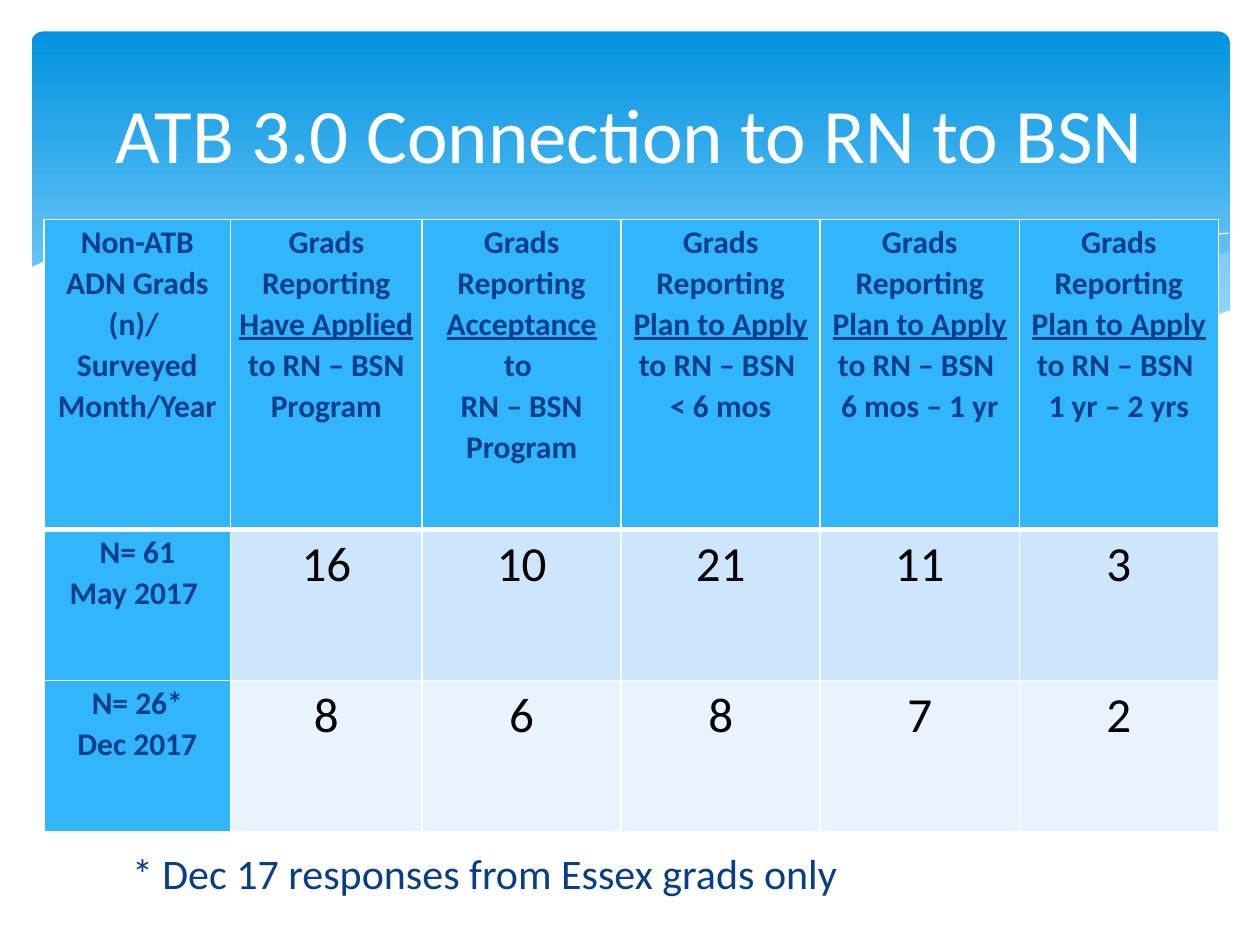
from dataclasses import dataclass
from typing import Optional

from lxml import etree
from pptx import Presentation
from pptx import util as u
from pptx.dml.color import RGBColor
from pptx.enum import shapes, text
from pptx.oxml.ns import qn


@dataclass(frozen=True)
class Theme:
    font: str = "Calibri"
    white: str = "FFFFFF"
    black: str = "000000"
    navy: str = "073E87"
    header: str = "31B6FD"
    bands: tuple = ("CEE5FE", "E8F3FF")
    banner: tuple = ("0293E0", "83D3FE")
    mist: str = "C6E7FC"
    title_size: int = 44
    value_size: int = 28
    note_size: int = 24
    label_size: int = 18


@dataclass(frozen=True)
class Wave:
    points: tuple
    fill: Optional[str] = None
    alpha: int = 100


@dataclass(frozen=True)
class Span:
    text: str
    underline: bool = False


THEME = Theme()

# Banner curves, in inches from the slide corner, back to front
WAVES = (
    Wave(((9.76, 2), (9.35, 2.07), (8.61, 2.23), (7.79, 2.42), (7.06, 2.57), (6.61, 2.65),
          (7.05, 2.71), (7.57, 2.76), (8.03, 2.78), (8.54, 2.76), (8.97, 2.7), (9.35, 2.62),
          (9.76, 2.47)), THEME.mist, 29),
    Wave(((8.93, 2.73), (8.37, 2.65), (7.75, 2.54), (7.06, 2.4), (6.29, 2.22), (5.69, 2.08),
          (5.14, 1.98), (4.65, 1.91), (4.2, 1.87), (3.61, 1.85), (3.13, 1.88), (2.86, 1.91),
          (3.42, 1.99), (4.04, 2.11), (4.91, 2.32), (5.66, 2.48), (6.34, 2.61), (6.95, 2.7),
          (7.48, 2.76), (8.07, 2.78), (8.57, 2.77)), THEME.mist, 40),
    Wave(((3.09, 1.95), (3.44, 1.9), (3.87, 1.87), (4.33, 1.87), (4.89, 1.9), (5.56, 1.97),
          (6.36, 2.08), (7.27, 2.26), (8.31, 2.51), (9.07, 2.72))),
    Wave(((6.13, 2.57), (6.72, 2.41), (7.48, 2.23), (8.06, 2.1), (8.66, 1.99), (9.1, 1.92),
          (9.51, 1.87), (9.75, 1.85))),
    Wave(((9.77, 2.46), (9.5, 2.56), (9.2, 2.65), (8.75, 2.73), (8.09, 2.77), (7.44, 2.74),
          (6.68, 2.65), (5.79, 2.5), (4.47, 2.2), (3.65, 2.02), (2.92, 1.9), (2.3, 1.85),
          (1.77, 1.84), (1.32, 1.86), (0.95, 1.91), (0.59, 1.99), (0.36, 2.07), (0.23, 2.13),
          (0.23, 3.29), (9.77, 3.29)), THEME.white),
)


def plan_heading(period: str) -> tuple:
    return ((Span("Grads Reporting "), Span("Plan to Apply ", True), Span("to RN – BSN ")),
            (Span(period),))


# Each heading is a tuple of paragraphs, each paragraph a tuple of spans
HEADINGS = (
    ((Span("Non-ATB ADN Grads (n)/ "),), (Span("Surveyed"),), (Span("Month/Year"),)),
    ((Span("Grads Reporting "), Span("Have Applied ", True), Span("to RN – BSN Program")),),
    ((Span("Grads Reporting "), Span("Acceptance", True), Span(" to ")),
     (Span("RN – BSN Program"),)),
    plan_heading("< 6 mos"),
    plan_heading("6 mos – 1 yr"),
    plan_heading("1 yr – 2 yrs"),
)
SURVEYS = (
    (("N= 61", "May 2017 "), (16, 10, 21, 11, 3)),
    (("N= 26*", "Dec 2017"), (8, 6, 8, 7, 2)),
)
COLUMN_WIDTHS = (1.48, 1.52, 1.58, 1.58, 1.58, 1.58)
ROW_HEIGHTS = (2.46, 1.2, 1.2)


def color(value: str) -> RGBColor:
    return RGBColor.from_string(value)


def style_span(span, size: int, shade: str, bold: bool = False, underline: bool = False) -> None:
    span.font.name = THEME.font
    span.font.size = u.Pt(size)
    span.font.bold = bold
    span.font.underline = underline
    span.font.color.rgb = color(shade)


def draw_banner(page) -> None:
    box = page.shapes.add_shape(shapes.MSO_SHAPE.ROUNDED_RECTANGLE,
                                u.Inches(0.25), u.Inches(0.25), u.Inches(9.51), u.Inches(2.7))
    box.adjustments[0] = 0.034
    box.shadow.inherit = False
    box.line.fill.background()
    box.fill.gradient()
    box.fill.gradient_angle = 270
    for stop, shade, position in zip(box.fill.gradient_stops, THEME.banner, (0, 0.9)):
        stop.color.rgb = color(shade)
        stop.position = position


def draw_wave(page, wave: Wave) -> None:
    points = [(u.Inches(x), u.Inches(y)) for x, y in wave.points]
    builder = page.shapes.build_freeform(*points[0])
    builder.add_line_segments(points[1:], close=wave.fill is not None)
    shape = builder.convert_to_shape()
    shape.shadow.inherit = False
    if wave.fill is None:
        shape.fill.background()
        shape.line.color.rgb = color(THEME.white)
        shape.line.width = u.Pt(0)
        return
    shape.line.fill.background()
    shape.fill.solid()
    shape.fill.fore_color.rgb = color(wave.fill)
    if wave.alpha < 100:
        tint = shape.element.spPr.find(".//" + qn("a:srgbClr"))
        etree.SubElement(tint, qn("a:alpha"), val=str(wave.alpha * 1000))


def set_borders(cell, top: int, bottom: int) -> None:
    properties = cell._tc.get_or_add_tcPr()
    sides = (("lnL", 1), ("lnR", 1), ("lnT", top), ("lnB", bottom))
    for index, (side, width) in enumerate(sides):
        line = etree.Element(qn("a:" + side), w=str(u.Pt(width)))
        fill = etree.SubElement(line, qn("a:solidFill"))
        etree.SubElement(fill, qn("a:srgbClr"), val=THEME.white)
        properties.insert(index, line)


def fill_cell(cell, paragraphs: tuple, fill: str, size: int, shade: str, bold: bool,
              space_after: int = 0) -> None:
    cell.fill.solid()
    cell.fill.fore_color.rgb = color(fill)
    cell.margin_left = cell.margin_right = u.Inches(0.07)
    cell.margin_top, cell.margin_bottom = u.Inches(0.01), 0
    frame = cell.text_frame
    for index, spans in enumerate(paragraphs):
        para = frame.add_paragraph() if index else frame.paragraphs[0]
        para.alignment = text.PP_ALIGN.CENTER
        para.line_spacing = 1.07
        para.space_after = u.Pt(space_after)
        for item in spans:
            span = para.add_run()
            span.text = item.text
            style_span(span, size, shade, bold, item.underline)


def draw_table(page) -> None:
    table = page.shapes.add_table(
        len(ROW_HEIGHTS), len(COLUMN_WIDTHS), u.Inches(0.35), u.Inches(1.74),
        u.Inches(sum(COLUMN_WIDTHS)), u.Inches(sum(ROW_HEIGHTS))).table
    for column, width in zip(table.columns, COLUMN_WIDTHS):
        column.width = u.Inches(width)
    for row, height in zip(table.rows, ROW_HEIGHTS):
        row.height = u.Inches(height)

    label = (THEME.header, THEME.label_size, THEME.navy, True)
    for index, heading in enumerate(HEADINGS):
        fill_cell(table.cell(0, index), heading, *label)
    for row, ((names, values), band) in enumerate(zip(SURVEYS, THEME.bands), 1):
        fill_cell(table.cell(row, 0), tuple((Span(name),) for name in names), *label)
        for column, value in enumerate(values, 1):
            fill_cell(table.cell(row, column), ((Span(str(value)),),), band,
                      THEME.value_size, THEME.black, False, 8)
    for row in range(len(ROW_HEIGHTS)):
        for cell in table.rows[row].cells:
            set_borders(cell, 3 if row == 1 else 1, 3 if row == 0 else 1)


def draw_title(page) -> None:
    title = page.shapes.title
    title.left, title.top = u.Inches(0.5), u.Inches(0.37)
    title.width, title.height = u.Inches(9), u.Inches(1.37)
    title.text_frame.text = "ATB 3.0 Connection to RN to BSN"
    title.text_frame.vertical_anchor = text.MSO_ANCHOR.MIDDLE
    para = title.text_frame.paragraphs[0]
    para.alignment = text.PP_ALIGN.CENTER
    style_span(para.runs[0], THEME.title_size, THEME.white)
    # Bring the title in front of the banner
    title.element.getparent().append(title.element)


def draw_footnote(page) -> None:
    box = page.shapes.add_textbox(u.Inches(0.95), u.Inches(6.68), u.Inches(8.1), u.Inches(0.5))
    box.text_frame.word_wrap = True
    box.text_frame.text = "* Dec 17 responses from Essex grads only"
    style_span(box.text_frame.paragraphs[0].runs[0], THEME.note_size, THEME.navy)


def main() -> None:
    deck = Presentation()
    deck.slide_width, deck.slide_height = u.Inches(10), u.Inches(7.5)
    page = deck.slides.add_slide(deck.slide_layouts[5])
    draw_banner(page)
    for wave in WAVES:
        draw_wave(page, wave)
    draw_title(page)
    draw_footnote(page)
    draw_table(page)
    deck.save("out.pptx")


if __name__ == "__main__":
    main()
